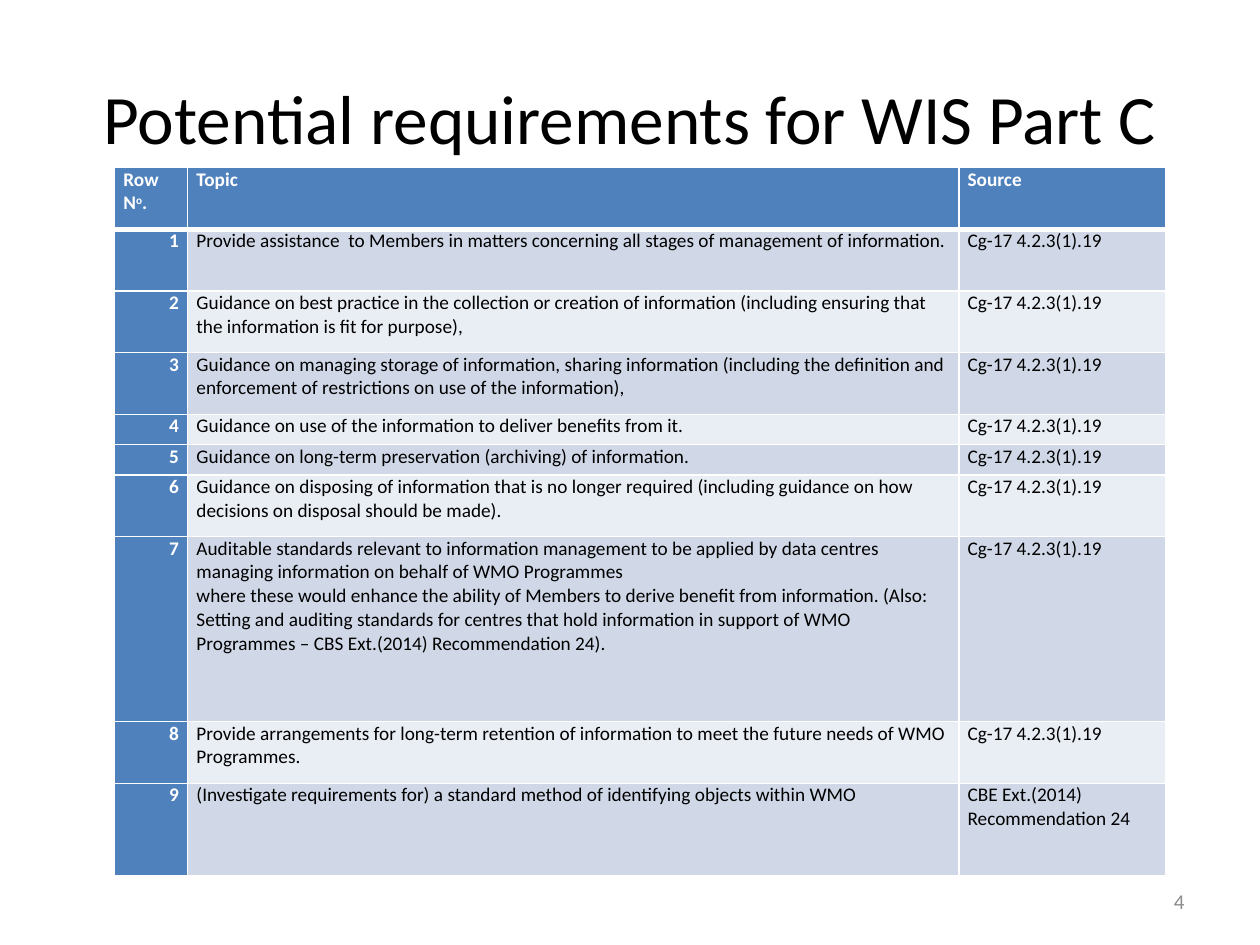
from lxml import etree
from pptx import Presentation, util as u
from pptx.dml.color import RGBColor
from pptx.enum import text
from pptx.oxml import ns

Inches = u.Inches
FONT = "Calibri"
COLORS = {
    "ink": "000000",
    "white": "FFFFFF",
    "blue": "4F81BD",
    "band_dark": "D0D8E8",
    "band_light": "E9EDF4",
    "grey": "8C8C8C",
}
COLUMN_WIDTHS = [0.58, 6.12, 1.64]
ROW_HEIGHTS = [0.49, 0.49, 0.49, 0.49, 0.24, 0.24, 0.49, 1.47, 0.49, 0.73]
CONGRESS = "Cg-17 4.2.3(1).19"

# Each requirement: paragraphs of the topic, then its source
REQUIREMENTS = [
    (["Provide assistance  to Members in matters concerning all stages of management of information."], CONGRESS),
    (["Guidance on best practice in the collection or creation of information "
      "(including ensuring that the information is fit for purpose),"], CONGRESS),
    (["Guidance on managing storage of information, sharing information (including the definition "
      "and enforcement of restrictions on use of the information),"], CONGRESS),
    (["Guidance on use of the information to deliver benefits from it."], CONGRESS),
    (["Guidance on long-term preservation (archiving) of information."], CONGRESS),
    (["Guidance on disposing of information that is no longer required (including guidance on how "
      "decisions on disposal should be made)."], CONGRESS),
    (["Auditable standards relevant to information management to be applied by data centres "
      "managing information on behalf of WMO Programmes",
      "where these would enhance the ability of Members to derive benefit from information. "
      "(Also: Setting and auditing standards for centres that hold information in support of WMO "
      "Programmes – CBS Ext.(2014) Recommendation 24)."], CONGRESS),
    (["Provide arrangements for long-term retention of information to meet the future needs of "
      "WMO Programmes."], CONGRESS),
    (["(Investigate requirements for) a standard method of identifying objects within WMO"],
     "CBE Ext.(2014) Recommendation 24"),
]


def add_span(para, words, size, color, bold=False):
    span = para.add_run()
    span.text = words
    span.font.name = FONT
    span.font.size = u.Pt(size)
    span.font.bold = bold
    span.font.color.rgb = RGBColor.from_string(COLORS[color])
    return span


def set_borders(cell, bottom):
    properties = cell._tc.get_or_add_tcPr()
    for side, points in (("L", 1), ("R", 1), ("T", 1), ("B", bottom)):
        line = etree.SubElement(properties, ns.qn(f"a:ln{side}"), w=str(u.Pt(points)))
        fill = etree.SubElement(line, ns.qn("a:solidFill"))
        etree.SubElement(fill, ns.qn("a:srgbClr"), val=COLORS["white"])


def fill_cell(cell, paragraphs, fill, color="ink", bold=False,
              align=text.PP_ALIGN.LEFT, bottom=1):
    cell.margin_left = cell.margin_right = Inches(0.07)
    cell.margin_top = cell.margin_bottom = 0
    set_borders(cell, bottom)
    cell.fill.solid()
    cell.fill.fore_color.rgb = RGBColor.from_string(COLORS[fill])
    frame = cell.text_frame
    for index, words in enumerate(paragraphs):
        para = frame.add_paragraph() if index else frame.paragraphs[0]
        para.alignment = align
        add_span(para, words, 11, color, bold)


def place_title(page, left, top, width, height):
    title = page.shapes.title
    title.left, title.top, title.width, title.height = map(Inches, (left, top, width, height))
    frame = title.text_frame
    frame.word_wrap = True
    frame.auto_size = text.MSO_AUTO_SIZE.NONE
    frame.vertical_anchor = text.MSO_ANCHOR.MIDDLE
    para = frame.paragraphs[0]
    para.alignment = text.PP_ALIGN.CENTER
    add_span(para, "Potential requirements for WIS Part C", 39.6, "ink")


def place_requirements(page, left, top, width, height):
    table = page.shapes.add_table(len(ROW_HEIGHTS), len(COLUMN_WIDTHS),
                                  *map(Inches, (left, top, width, height))).table
    for column, column_width in zip(table.columns, COLUMN_WIDTHS):
        column.width = Inches(column_width)
    for row, row_height in zip(table.rows, ROW_HEIGHTS):
        row.height = Inches(row_height)

    # Header row, with a raised "o" in the number heading
    for column, heading in enumerate(["Row N", "Topic", "Source"]):
        fill_cell(table.cell(0, column), [heading], "blue", "white", True, bottom=3)
    number_para = table.cell(0, 0).text_frame.paragraphs[0]
    raised = add_span(number_para, "o", 11, "white", True)
    raised._r.get_or_add_rPr().set("baseline", "30000")
    add_span(number_para, ".", 11, "white", True)

    # Numbered rows in alternating bands
    for number, (topic, source) in enumerate(REQUIREMENTS, start=1):
        band = "band_dark" if number % 2 else "band_light"
        fill_cell(table.cell(number, 0), [str(number)], "blue", "white", True,
                  text.PP_ALIGN.RIGHT)
        fill_cell(table.cell(number, 1), topic, band)
        fill_cell(table.cell(number, 2), [source], band)


def place_page_number(page, left, top, width, height):
    box = page.shapes.add_textbox(*map(Inches, (left, top, width, height)))
    frame = box.text_frame
    frame.word_wrap = True
    frame.vertical_anchor = text.MSO_ANCHOR.MIDDLE
    para = frame.paragraphs[0]
    para.alignment = text.PP_ALIGN.RIGHT
    add_span(para, "4", 12, "grey")


def main():
    deck = Presentation()
    deck.slide_width, deck.slide_height = Inches(10), Inches(7.5)
    page = deck.slides.add_slide(deck.slide_layouts.get_by_name("Title Only"))
    place_title(page, 0.5, 0.3, 9, 1.25)
    place_requirements(page, 0.91, 1.33, sum(COLUMN_WIDTHS), sum(ROW_HEIGHTS))
    place_page_number(page, 7.17, 6.95, 2.33, 0.4)
    deck.save("out.pptx")


if __name__ == "__main__":
    main()
